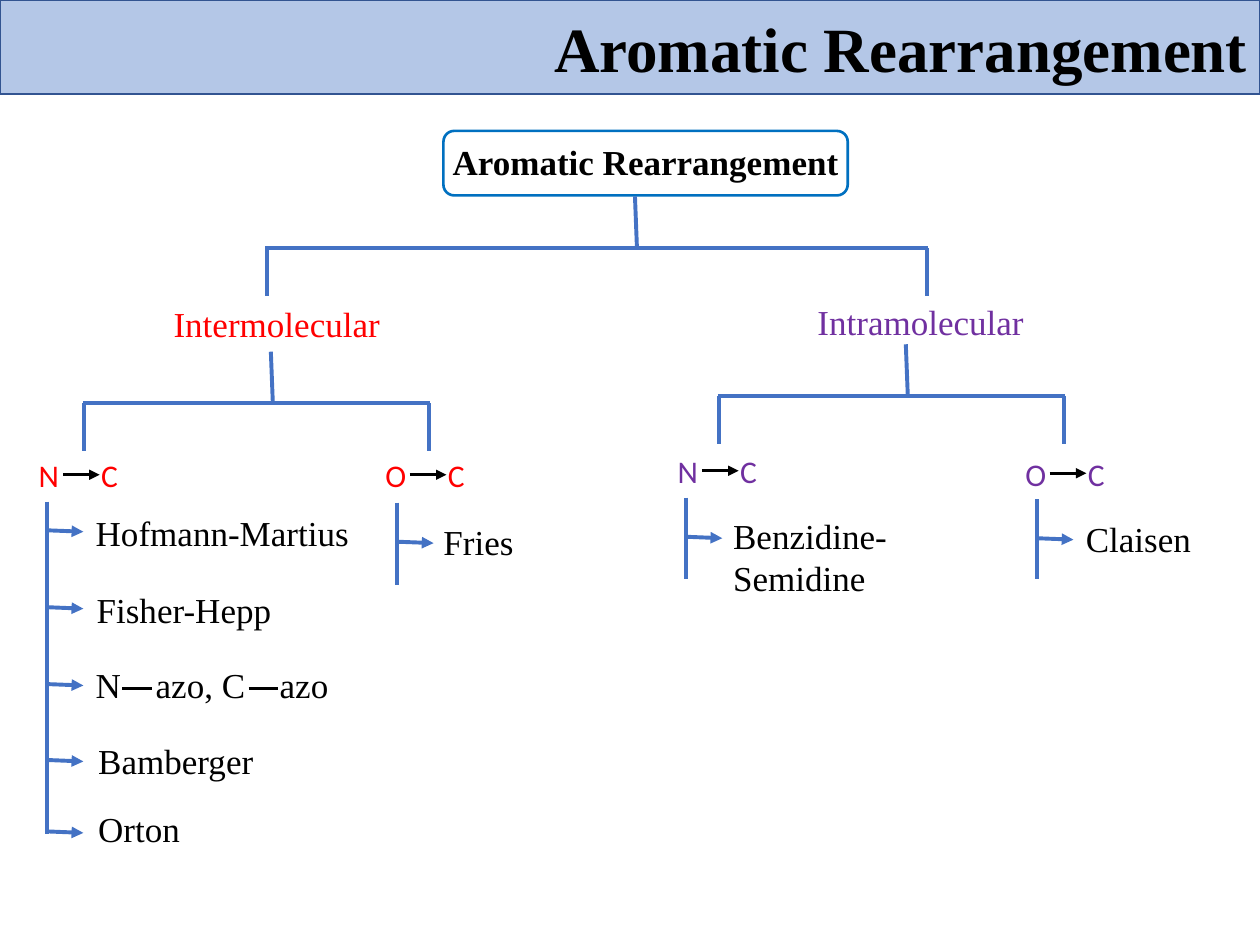
from pptx import Presentation
from pptx.dml.color import RGBColor
from pptx.enum.shapes import MSO_CONNECTOR, MSO_SHAPE
from pptx.enum.text import MSO_ANCHOR, MSO_AUTO_SIZE, PP_ALIGN
from pptx.oxml.ns import qn
from pptx.util import Cm, Pt
from lxml.etree import SubElement

BLACK = RGBColor(0x00, 0x00, 0x00)
RED = RGBColor(0xFF, 0x00, 0x00)
PURPLE = RGBColor(0x70, 0x30, 0xA0)
BRANCH_BLUE = RGBColor(0x44, 0x72, 0xC4)
ROOT_BLUE = RGBColor(0x00, 0x70, 0xC0)
BANNER_FILL = RGBColor(0xB4, 0xC7, 0xE7)
BANNER_EDGE = RGBColor(0x32, 0x54, 0x91)


def write(frame, text, font="Times New Roman", size=20, color=BLACK, bold=False,
          align=PP_ALIGN.LEFT, anchor=MSO_ANCHOR.TOP, wrap=True, tabs=()):
    """Fill a text frame; tabs are stop positions in cm."""
    frame.auto_size = MSO_AUTO_SIZE.NONE
    frame.word_wrap = wrap
    frame.vertical_anchor = anchor
    paragraph = frame.paragraphs[0]
    paragraph.alignment = align
    run = paragraph.add_run()
    run.text = text
    run.font.name, run.font.size, run.font.bold = font, Pt(size), bold
    run.font.color.rgb = color
    if tabs:
        stops = SubElement(paragraph._p.get_or_add_pPr(), qn("a:tabLst"))
        for stop in tabs:
            SubElement(stops, qn("a:tab"), pos=str(Cm(stop)), algn="l")


def draw_line(x1, y1, x2, y2, color=BRANCH_BLUE, width=2.25, arrow=False):
    line = slide.shapes.add_connector(
        MSO_CONNECTOR.STRAIGHT, Cm(x1), Cm(y1), Cm(x2), Cm(y2))
    line.line.color.rgb = color
    line.line.width = Pt(width)
    if arrow:
        SubElement(line.line._get_or_add_ln(), qn("a:tailEnd"), type="triangle")
    SubElement(line._element.spPr, qn("a:effectLst"))


presentation = Presentation()
presentation.slide_width, presentation.slide_height = Cm(25.4), Cm(19.05)
slide = presentation.slides.add_slide(presentation.slide_layouts[5])

# Title banner
banner = slide.shapes.title
banner.left, banner.top, banner.width, banner.height = Cm(0), Cm(0), Cm(25.4), Cm(1.9)
banner.fill.solid()
banner.fill.fore_color.rgb = BANNER_FILL
banner.line.color.rgb = BANNER_EDGE
banner.line.width = Pt(1)
write(banner.text_frame, "Aromatic Rearrangement", size=36, bold=True,
      align=PP_ALIGN.RIGHT, anchor=MSO_ANCHOR.MIDDLE)

# Root of the tree
root = slide.shapes.add_shape(
    MSO_SHAPE.ROUNDED_RECTANGLE, Cm(8.94), Cm(2.64), Cm(8.15), Cm(1.3))
root.shadow.inherit = False
root.fill.background()
root.line.color.rgb = ROOT_BLUE
root.line.width = Pt(1.5)
write(root.text_frame, "Aromatic Rearrangement", bold=True,
      align=PP_ALIGN.CENTER, wrap=False)

# Forks: stem x, bar y, left and right drop x
forks = [(12.8, 5, 5.38, 18.69), (5.46, 8.13, 1.7, 8.64), (18.26, 7.98, 14.5, 21.44)]
for stem, bar, left, right in forks:
    draw_line(stem, bar - 1.04, stem + 0.04, bar)
    draw_line(left - 0.03, bar, right + 0.02, bar)
    for drop in (left, right):
        draw_line(drop, bar, drop, bar + 0.97)

# The two classes
classes = [("Intermolecular", RED, 3.25, 5.97, 9.12),
           ("Intramolecular", PURPLE, 16.23, 5.94, 6.93)]
for name, color, left, top, width in classes:
    box = slide.shapes.add_textbox(Cm(left), Cm(top), Cm(width), Cm(1.12))
    write(box.text_frame, name, color=color)

# Migrations: from atom, colour, label left and top, spine x, top and bottom,
# reactions (name, arrow y, text left, top, width, height)
migrations = [
    ("N", RED, 0.53, 9.07, 0.94, 10.11, 16.81, [
        ("Hofmann-Martius", 10.69, 1.68, 10.19, 5.84, 1.12),
        ("Fisher-Hepp", 12.24, 1.7, 11.73, 5.51, 1.12),
        ("N\tazo, C\tazo", 13.79, 1.68, 13.26, 6.48, 1.96),
        ("Bamberger", 15.32, 1.73, 14.78, 4.32, 1.12),
        ("Orton", 16.76, 1.73, 16.15, 4.32, 1.12)]),
    ("O", RED, 7.52, 9.07, 8, 10.13, 11.79, [
        ("Fries", 10.92, 8.69, 10.36, 3.25, 1.12)]),
    ("N", PURPLE, 13.41, 8.99, 13.82, 10.03, 11.68, [
        ("Benzidine-Semidine", 10.82, 14.53, 10.24, 4.06, 1.96)]),
    ("O", PURPLE, 20.42, 9.04, 20.9, 10.06, 11.68, [
        ("Claisen", 10.85, 21.64, 10.31, 3.25, 1.12)]),
]
for atom, color, left, top, spine, spine_top, spine_bottom, reactions in migrations:
    label = slide.shapes.add_textbox(Cm(left), Cm(top), Cm(2.16), Cm(1.02))
    write(label.text_frame, f"{atom}\tC", font="Calibri", size=18, color=color,
          tabs=[1.26])
    draw_line(left + 0.74, top + 0.5, left + 1.48, top + 0.5, BLACK, 1.5, arrow=True)
    draw_line(spine, spine_top, spine, spine_bottom)
    for name, arrow_y, text_left, text_top, width, height in reactions:
        draw_line(spine, arrow_y, spine + 0.74, arrow_y + 0.03, arrow=True)
        reaction = slide.shapes.add_textbox(
            Cm(text_left), Cm(text_top), Cm(width), Cm(height))
        write(reaction.text_frame, name, tabs=[1.21, 3.71] if "\t" in name else ())

# Bonds in the azo entry
for bond in (2.46, 5.01):
    draw_line(bond, 13.88, bond + 0.6, 13.88, BLACK, 1.5)

presentation.save("out.pptx")
